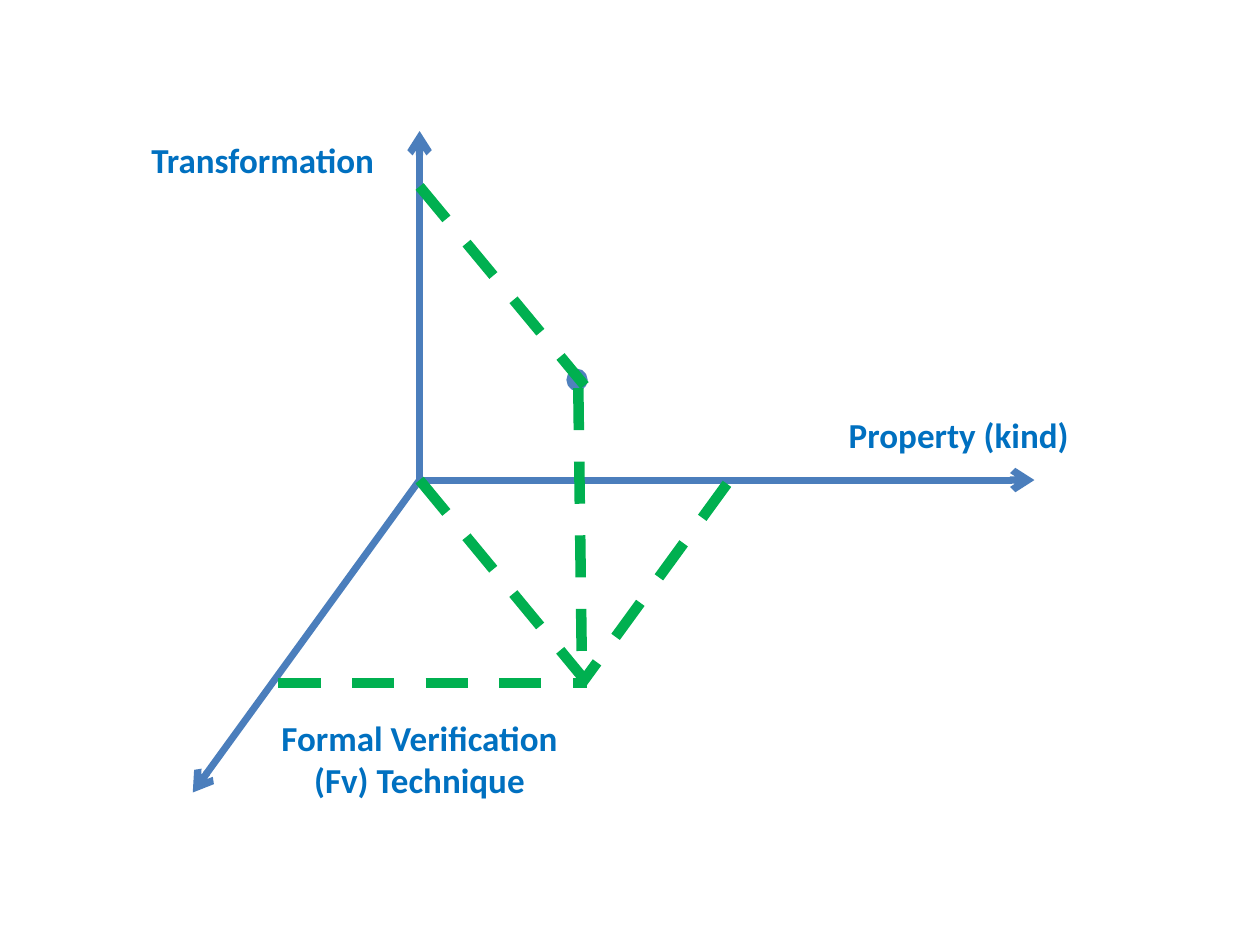
import dataclasses

import pptx
import pptx.dml.color
import pptx.enum.dml
import pptx.enum.shapes
import pptx.enum.text
import pptx.oxml
import pptx.oxml.ns
import pptx.util

Inches = pptx.util.Inches
Pt = pptx.util.Pt


@dataclasses.dataclass(frozen=True)
class Theme:
    font: str = "Calibri"
    label_size: int = 20
    label: str = "0070C0"
    axis: str = "4B7EBC"
    point: str = "4F81BD"
    guide: str = "00B050"
    axis_width: int = 4
    point_width: int = 2
    guide_width: int = 6


THEME = Theme()


def rgb(value):
    return pptx.dml.color.RGBColor.from_string(value)


def add_text(shapes, text, left, top, width, height, *, size=THEME.label_size,
             color=THEME.label, bold=True, align=pptx.enum.text.PP_ALIGN.CENTER):
    label = shapes.add_textbox(left, top, width, height)
    frame = label.text_frame
    frame.word_wrap = True
    frame.auto_size = pptx.enum.text.MSO_AUTO_SIZE.SHAPE_TO_FIT_TEXT
    paragraph = frame.paragraphs[0]
    paragraph.alignment = align
    run = paragraph.add_run()
    run.text = text
    run.font.name = THEME.font
    run.font.size = Pt(size)
    run.font.bold = bold
    run.font.color.rgb = rgb(color)


def add_line(shapes, start, end, color, width, *, dashed=False, arrow=False):
    line = shapes.add_connector(
        pptx.enum.shapes.MSO_CONNECTOR.STRAIGHT, *start, *end)
    line.line.color.rgb = rgb(color)
    line.line.width = Pt(width)
    if dashed:
        line.line.dash_style = pptx.enum.dml.MSO_LINE.DASH
    properties = line._element.spPr
    namespace = pptx.oxml.ns.nsdecls("a")
    if arrow:
        properties.find(pptx.oxml.ns.qn("a:ln")).append(
            pptx.oxml.parse_xml(f'<a:tailEnd {namespace} type="arrow"/>'))
    properties.append(pptx.oxml.parse_xml(f"<a:effectLst {namespace}/>"))


def add_point(shapes, left, top, width, height):
    point = shapes.add_shape(
        pptx.enum.shapes.MSO_SHAPE.OVAL, left, top, width, height)
    point.shadow.inherit = False
    point.fill.solid()
    point.fill.fore_color.rgb = rgb(THEME.point)
    point.line.color.rgb = rgb(THEME.point)
    point.line.width = Pt(THEME.point_width)


def add_verification_space(slide, left, top):
    space = slide.shapes.add_group_shape().shapes
    origin_x, origin_y = left + Inches(2.3), top + Inches(2.77)

    def place(x, y):
        return origin_x + Inches(x), origin_y + Inches(y)

    origin = place(0, 0)
    for tip in [(0, -2.77), (4.88, 0), (-1.8, 2.48)]:
        add_line(space, origin, place(*tip), THEME.axis, THEME.axis_width,
                 arrow=True)

    labels = [
        ("Property (kind)", 3.03, -0.58, 2.5, 0.44),
        ("Transformation", -2.3, -2.76, 2.11, 0.44),
        ("Formal Verification (Fv) Technique", -1.33, 1.83, 2.66, 0.77),
    ]
    for text, x, y, width, height in labels:
        add_text(space, text, *place(x, y), Inches(width), Inches(height))

    add_point(space, *place(1.18, -0.87), Inches(0.14), Inches(0.15))

    floor = (1.29, 1.61)
    floor_corner = (1.33, 1.61)
    guides = [
        ((1.26, -0.73), floor),
        ((2.44, 0.03), floor),
        ((-1.12, 1.61), floor_corner),
        ((0, 0), floor_corner),
        ((0, -2.33), (1.31, -0.75)),
    ]
    for start, end in guides:
        add_line(space, place(*start), place(*end), THEME.guide,
                 THEME.guide_width, dashed=True)


def main():
    deck = pptx.Presentation()
    deck.slide_width, deck.slide_height = Inches(10), Inches(7.5)
    slide = deck.slides.add_slide(deck.slide_layouts.get_by_name("Blank"))
    add_verification_space(slide, Inches(1.03), Inches(1.04))
    deck.save("out.pptx")


if __name__ == "__main__":
    main()
